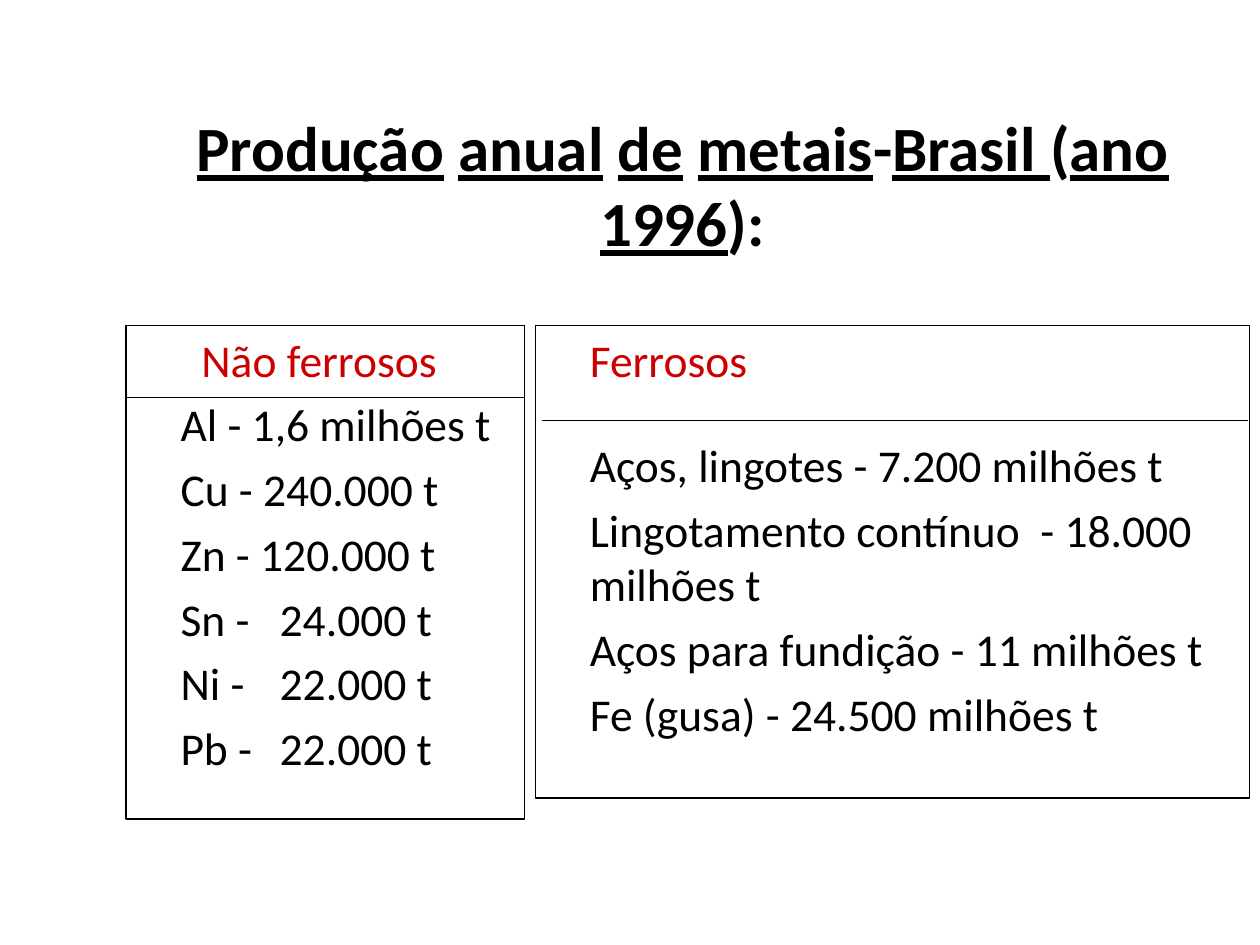
from dataclasses import dataclass

from lxml.etree import SubElement
from pptx import Presentation
from pptx.dml.color import RGBColor as Rgb
from pptx.enum.shapes import MSO_CONNECTOR as Link, MSO_SHAPE as Form
from pptx.enum.text import MSO_ANCHOR as Anchor, PP_ALIGN as Align
from pptx.oxml.ns import qn
from pptx.util import Cm, Pt


@dataclass(frozen=True)
class Theme:
    font: str = "Calibri"
    ink: Rgb = Rgb(0, 0, 0)
    red: Rgb = Rgb(0xCC, 0, 0)
    title: float = 36
    body: float = 26
    line: float = 0.75
    gap: float = 5.8


@dataclass(frozen=True)
class Box:
    """A place on the slide, in centimetres."""
    x: float
    y: float
    w: float
    h: float


@dataclass(frozen=True)
class Rule:
    x: float
    y: float
    w: float


@dataclass(frozen=True)
class Panel:
    frame: Box
    rule: Rule
    text: Box
    head: str
    rows: tuple[str, ...]
    indent: float = 0
    lead: float = Theme.gap


THEME = Theme()
TOP = 6.56
TAB = 2.0

TITLE = Box(2.96, 2.12, 21.6, 3.18)
# Each part of the heading with its underline
HEADING = (
    ("Produção", True), (" ", False), ("anual", True), (" ", False),
    ("de", True), (" ", False), ("metais", True), ("-", False),
    ("Brasil ", True), ("(", False), ("ano", True), (" ", False),
    ("1996", True), ("):", False),
)

PANELS = (
    Panel(
        Box(2.54, TOP, 8.04, 9.95), Rule(2.54, 8.01, 8.04),
        Box(3.39, TOP, 10.58, 9.65), "Não ferrosos",
        ("Al - 1,6 milhões t", "Cu - 240.000 t", "Zn - 120.000 t",
         "Sn -\t24.000 t", "Ni -\t22.000 t", "Pb -\t22.000 t"),
        indent=0.42,
    ),
    Panel(
        Box(10.8, TOP, 14.39, 9.53), Rule(10.92, 8.47, 14.23),
        Box(11.64, TOP, 13.76, 11.88), "Ferrosos",
        ("Aços, lingotes - 7.200 milhões t",
         "Lingotamento contínuo  - 18.000 milhões t",
         "Aços para fundição - 11 milhões t",
         "Fe (gusa) - 24.500 milhões t"),
        lead=29,
    ),
)


def place(box: Box) -> tuple:
    return Cm(box.x), Cm(box.y), Cm(box.w), Cm(box.h)


def add_text(slide, box: Box):
    frame = slide.shapes.add_textbox(*place(box)).text_frame
    frame.word_wrap = True
    return frame


def add_run(para, text: str, size: float, color: Rgb):
    run = para.add_run()
    run.text = text
    font = run.font
    font.name, font.size = THEME.font, Pt(size)
    font.color.rgb = color
    return font


def set_tab(para) -> None:
    """Line up the figures that follow a tab."""
    stops = SubElement(para._p.get_or_add_pPr(), qn("a:tabLst"))
    SubElement(stops, qn("a:tab"), pos=str(Cm(TAB)), algn="l")


def set_line(shape) -> None:
    shape.line.color.rgb = THEME.ink
    shape.line.width = Pt(THEME.line)


def draw_title(slide) -> None:
    frame = add_text(slide, TITLE)
    frame.vertical_anchor = Anchor.MIDDLE
    para = frame.paragraphs[0]
    para.alignment = Align.CENTER
    for text, under in HEADING:
        font = add_run(para, text, THEME.title, THEME.ink)
        font.bold, font.underline = True, under


def draw_panel(slide, panel: Panel) -> None:
    frame = add_text(slide, panel.text)
    head = frame.paragraphs[0]
    head._p.get_or_add_pPr().set("indent", str(Cm(panel.indent)))
    add_run(head, panel.head, THEME.body, THEME.red)
    for i, row in enumerate(panel.rows):
        para = frame.add_paragraph()
        para.space_before = Pt(THEME.gap if i else panel.lead)
        if "\t" in row:
            set_tab(para)
        add_run(para, row, THEME.body, THEME.ink)

    rect = slide.shapes.add_shape(Form.RECTANGLE, *place(panel.frame))
    rect.shadow.inherit = False
    rect.fill.background()
    set_line(rect)

    rule = panel.rule
    line = slide.shapes.add_connector(
        Link.STRAIGHT, Cm(rule.x), Cm(rule.y), Cm(rule.x + rule.w), Cm(rule.y))
    set_line(line)
    SubElement(line._element.spPr, qn("a:effectLst"))


def main() -> None:
    deck = Presentation()
    deck.slide_width, deck.slide_height = Cm(25.4), Cm(19.05)
    slide = deck.slides.add_slide(deck.slide_layouts[6])
    draw_title(slide)
    for panel in PANELS:
        draw_panel(slide, panel)
    deck.save("out.pptx")


if __name__ == "__main__":
    main()
